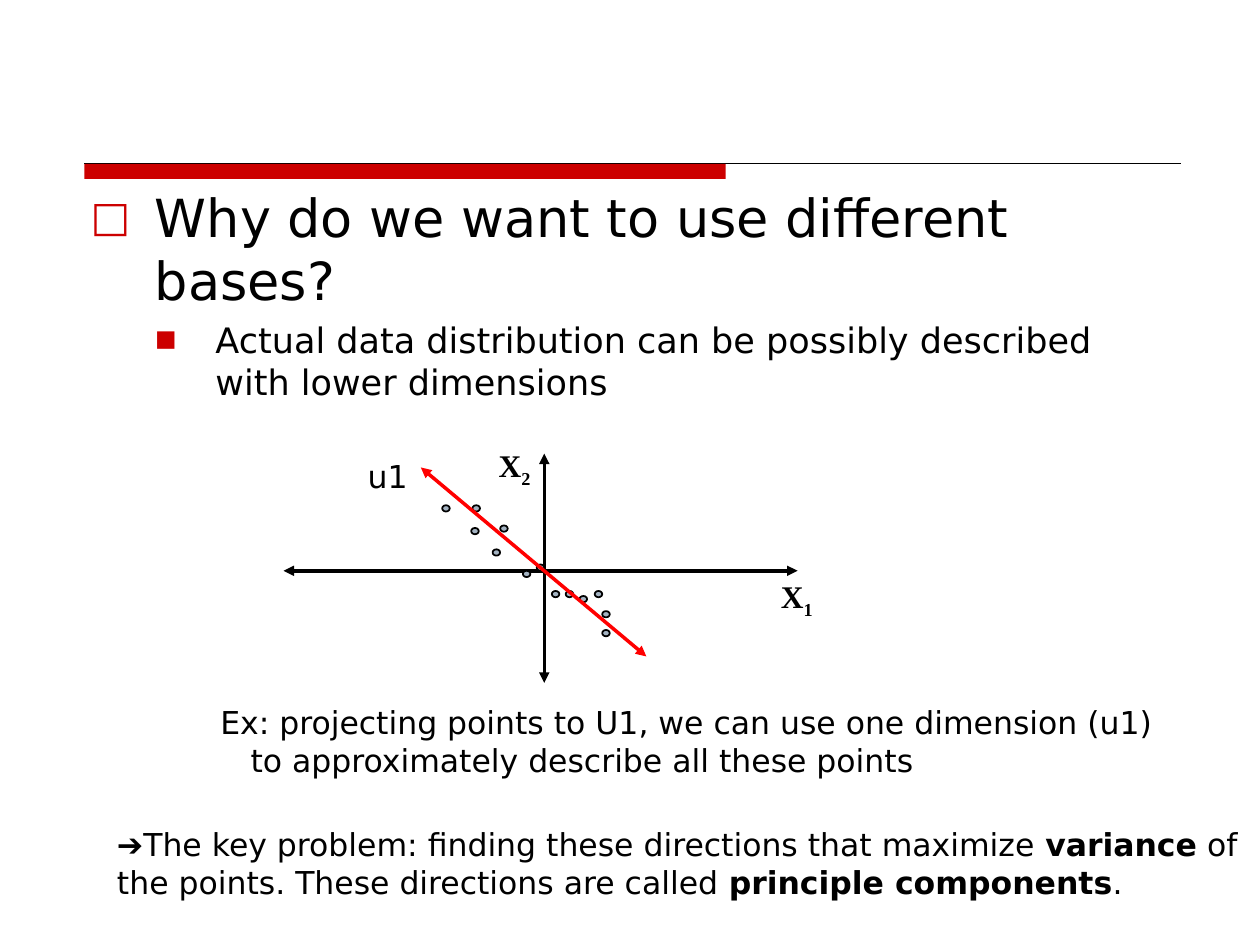
from pptx import Presentation
from pptx.dml.color import RGBColor
from pptx.enum import shapes, text
from pptx.oxml.ns import qn
from pptx.util import Inches, Pt
from lxml import etree

SANS, SERIF = "DejaVu Sans", "Times New Roman"
BLACK, RED, ACCENT, DOT = "000000", "FF0000", "CC0000", "A3B2C1"

# Content
# text, size, left margin, hanging indent, bullet, bullet size in percent
BODY = [
    ("Why do we want to use different bases?", 30, 0.51, 0.51, "□", 80),
    ("Actual data distribution can be possibly described with lower dimensions",
     20, 0.99, 0.48, "■", 65),
]
# from x, from y, to x, to y, colour
AXES = [(4.32, 5.42, 4.32, 3.6, BLACK), (2.25, 4.53, 6.33, 4.53, BLACK)]
TREND = (3.34, 3.71, 5.13, 5.21, RED)
POINTS = [(3.51, 4.01), (3.74, 4.19), (3.91, 4.36), (3.97, 4.17), (4.26, 4.48),
          (4.15, 4.53), (4.49, 4.69), (4.38, 4.69), (4.6, 4.73), (4.72, 4.69),
          (4.78, 4.85), (4.78, 5), (3.75, 4.01)]
# box, then lines of (text, style) runs; b is bold, s is subscript
NAMES = [((6.1, 4.53, 0.57, 0.4), [[("X", "b"), ("1", "bs")]]),
         ((3.86, 3.49, 0.64, 0.4), [[("X", "b"), ("2", "bs")]])]
NOTES = [
    ((2.82, 3.58, 0.52, 0.4), [[("u1", "")]]),
    ((1.65, 5.53, 7.82, 0.7), [
        [("Ex: projecting points to U1, we can use one dimension (u1)", "")],
        [("to approximately describe all these points", "")]]),
    ((0.83, 6.5, 9.31, 0.7), [
        [("➔The key problem: finding these directions that maximize ", ""),
         ("variance", "b"), (" of", "")],
        [("the points. These directions are called ", ""),
         ("principle components", "b"), (".", "")]]),
]

deck = Presentation()
deck.slide_width, deck.slide_height = Inches(10), Inches(7.5)
slide = deck.slides.add_slide(deck.slide_layouts[1])
items = slide.shapes


def paint(color, hue):
    color.rgb = RGBColor.from_string(hue)


def style(font, face, size):
    font.name, font.size = face, Pt(size)
    paint(font.color, BLACK)


def add(parent, tag, **attrs):
    return etree.SubElement(parent, qn(tag), attrs)


def shape(kind, box, fill, line=None):
    item = items.add_shape(kind, *map(Inches, box))
    item.shadow.inherit = False
    item.fill.solid()
    paint(item.fill.fore_color, fill)
    if line:
        paint(item.line.color, line)
        item.line.width = Pt(1)
    else:
        item.line.fill.background()


def rule(x1, y1, x2, y2, hue, width=2, arrows=True):
    item = items.add_connector(shapes.MSO_CONNECTOR.STRAIGHT,
                               *map(Inches, (x1, y1, x2, y2)))
    paint(item.line.color, hue)
    item.line.width = Pt(width)
    if arrows:
        for end in ("a:headEnd", "a:tailEnd"):
            add(item.line._get_or_add_ln(), end, type="triangle")
    add(item._element.spPr, "a:effectLst")


def label(box, lines, face, wrap):
    frame = items.add_textbox(*map(Inches, box)).text_frame
    frame.word_wrap = wrap
    for i, runs in enumerate(lines):
        para = frame.paragraphs[0] if i == 0 else frame.add_paragraph()
        style(para.font, face, 18)
        for words, look in runs:
            run = para.add_run()
            run.text = words
            if "b" in look:
                run.font.bold = True
            if "s" in look:
                run.font._element.set("baseline", "-25000")
    return frame


# Header band
rule(0.67, 1.3, 9.37, 1.3, BLACK, 0.75, False)
shape(shapes.MSO_SHAPE.RECTANGLE, (0.67, 1.3, 5.09, 0.12), ACCENT)

# Bulleted body; the slide has no title
title = items.title._element
title.getparent().remove(title)
body = slide.placeholders[1]
body.left, body.top, body.width, body.height = map(Inches, (0.62, 1.42, 8.75, 5.42))
frame = body.text_frame
frame.auto_size = text.MSO_AUTO_SIZE.NONE
for level, (words, size, left, hang, mark, scale) in enumerate(BODY):
    para = frame.paragraphs[0] if level == 0 else frame.add_paragraph()
    para.text, para.level = words, level
    style(para.font, SANS, size)
    props = para._p.get_or_add_pPr()
    props.set("marL", str(Inches(left)))
    props.set("indent", str(-Inches(hang)))
    # Bullet parts must come before the run defaults
    fonts = props.find(qn("a:defRPr"))
    add(add(props, "a:buClr"), "a:srgbClr", val=ACCENT)
    add(props, "a:buSzPct", val=str(scale * 1000))
    add(props, "a:buFont", typeface=SANS)
    add(props, "a:buChar", char=mark)
    props.append(fonts)

# Plot
for axis in AXES:
    rule(*axis)
for box, lines in NAMES:
    label(box, lines, SERIF, True)
for x, y in POINTS:
    shape(shapes.MSO_SHAPE.OVAL, (x, y, 0.06, 0.05), DOT, BLACK)
rule(*TREND)

# Notes
frames = [label(box, lines, SANS, False) for box, lines in NOTES]
example = frames[1].paragraphs[1]
example._p.get_or_add_pPr().set("marL", str(Inches(0.24)))

deck.save("out.pptx")
